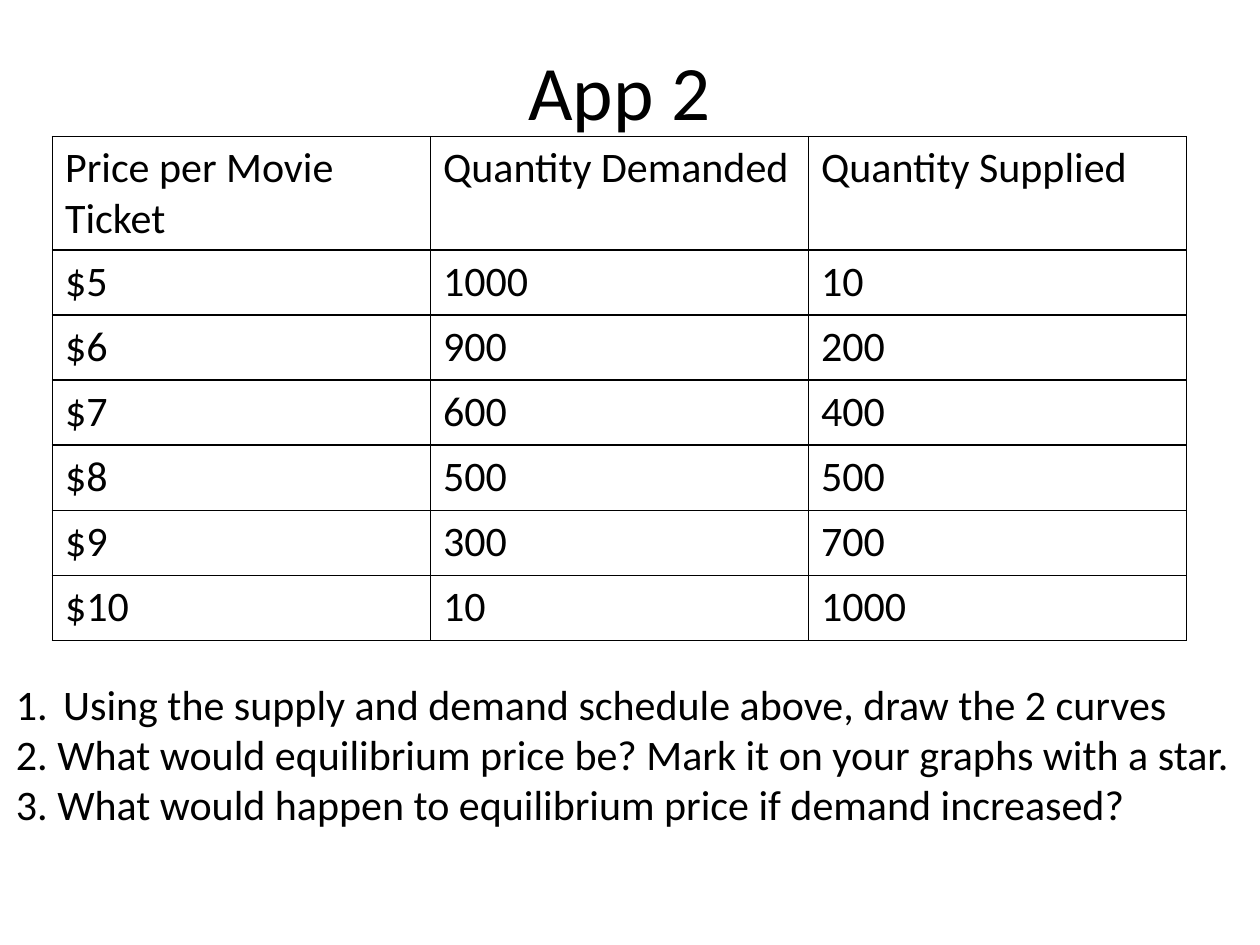
from dataclasses import dataclass

from lxml.etree import SubElement
from pptx import Presentation
from pptx.dml.color import RGBColor
from pptx.enum.text import MSO_ANCHOR, MSO_AUTO_SIZE, PP_ALIGN
from pptx.oxml.ns import qn
from pptx.util import Pt


@dataclass(frozen=True)
class Theme:
    font: str = "Calibri"
    ink: str = "000000"
    title_size: int = 44
    body_size: int = 24
    border_width: int = 1


class SlideBuilder:
    def __init__(self, slide, theme):
        self.slide = slide
        self.theme = theme

    def style(self, paragraph, size):
        paragraph.font.name = self.theme.font
        paragraph.font.size = Pt(size)
        paragraph.font.color.rgb = RGBColor.from_string(self.theme.ink)

    def add_title(self, text, left, top, width, height):
        shape = self.slide.shapes.add_textbox(Pt(left), Pt(top), Pt(width), Pt(height))
        frame = shape.text_frame
        frame.word_wrap = True
        frame.vertical_anchor = MSO_ANCHOR.MIDDLE
        frame.text = text
        paragraph = frame.paragraphs[0]
        paragraph.alignment = PP_ALIGN.CENTER
        self.style(paragraph, self.theme.title_size)

    def add_table(self, rows, left, top, width, row_height):
        shape = self.slide.shapes.add_table(
            len(rows), len(rows[0]), Pt(left), Pt(top), Pt(width), Pt(row_height * len(rows))
        )
        table = shape.table
        table.first_row = False
        table.horz_banding = False
        for row_index, row in enumerate(rows):
            for column_index, text in enumerate(row):
                cell = table.cell(row_index, column_index)
                cell.text = text
                self.style(cell.text_frame.paragraphs[0], self.theme.body_size)
                self.add_borders(cell)
                cell.fill.background()

    def add_borders(self, cell):
        properties = cell._tc.get_or_add_tcPr()
        for side in ("a:lnL", "a:lnR", "a:lnT", "a:lnB"):
            line = SubElement(properties, qn(side), w=str(Pt(self.theme.border_width)))
            fill = SubElement(line, qn("a:solidFill"))
            SubElement(fill, qn("a:srgbClr"), val=self.theme.ink)

    def add_questions(self, questions, left, top, width, height, indent):
        """Number the first question automatically; the others carry typed numbers."""
        shape = self.slide.shapes.add_textbox(Pt(left), Pt(top), Pt(width), Pt(height))
        frame = shape.text_frame
        frame.word_wrap = False
        frame.auto_size = MSO_AUTO_SIZE.SHAPE_TO_FIT_TEXT
        frame.text = "\n".join(questions)
        for paragraph in frame.paragraphs:
            self.style(paragraph, self.theme.body_size)
        properties = frame.paragraphs[0]._p.get_or_add_pPr()
        properties.set("marL", str(Pt(indent)))
        properties.set("indent", str(-Pt(indent)))
        numbering = SubElement(properties, qn("a:buAutoNum"), type="arabicPeriod")
        properties.insert(0, numbering)


SCHEDULE = [
    ("Price per Movie Ticket", "Quantity Demanded", "Quantity Supplied"),
    ("$5", "1000", "10"),
    ("$6", "900", "200"),
    ("$7", "600", "400"),
    ("$8", "500", "500"),
    ("$9", "300", "700"),
    ("$10", "10", "1000"),
]

QUESTIONS = [
    "Using the supply and demand schedule above, draw the 2 curves",
    "2. What would equilibrium price be? Mark it on your graphs with a star.",
    "3. What would happen to equilibrium price if demand increased?",
]


def main():
    presentation = Presentation()
    presentation.slide_width = Pt(720)
    presentation.slide_height = Pt(540)
    slide = presentation.slides.add_slide(presentation.slide_layouts[6])
    builder = SlideBuilder(slide, Theme())
    builder.add_title("App 2", left=30, top=6, width=648, height=90)
    builder.add_table(SCHEDULE, left=30, top=78, width=648, row_height=37.2)
    builder.add_questions(QUESTIONS, left=2, top=384, width=713.5, height=94.5, indent=27)
    presentation.save("out.pptx")


if __name__ == "__main__":
    main()
